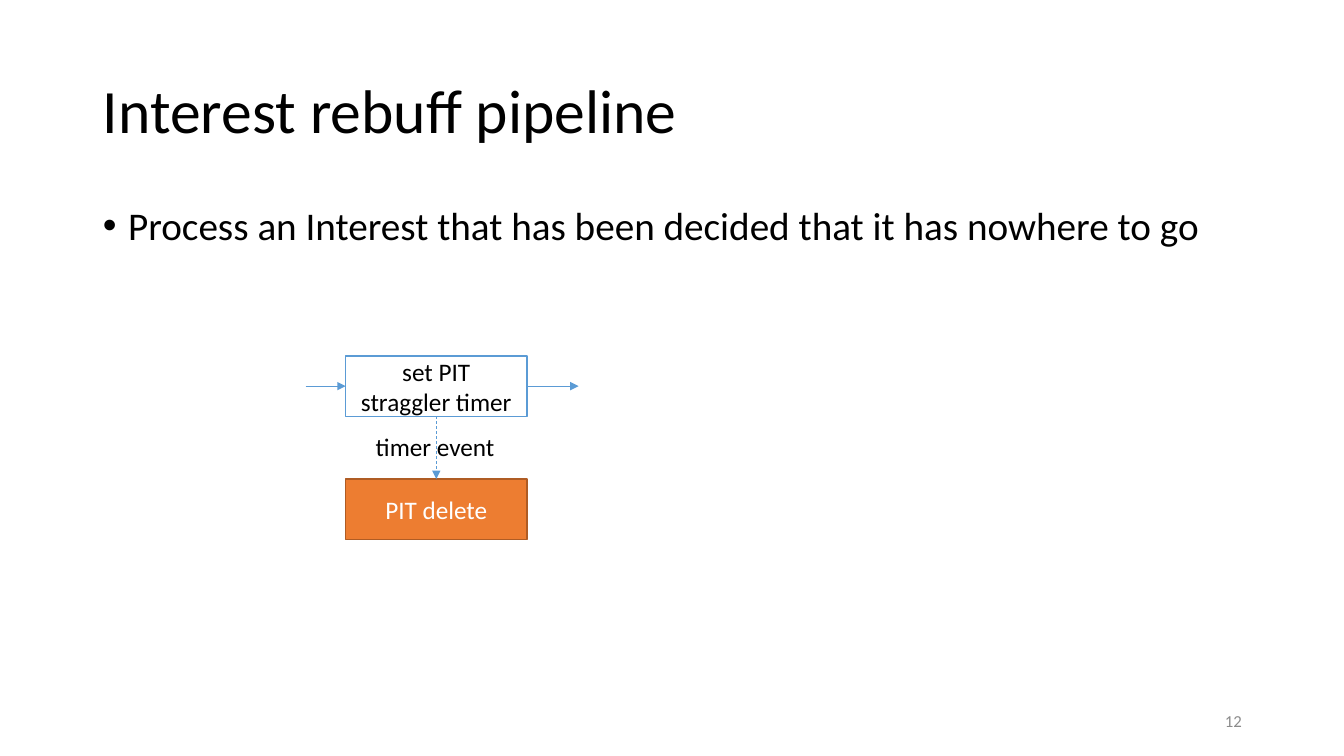
import pptx
import pptx.dml.color
import pptx.enum.dml
import pptx.enum.shapes
import pptx.enum.text
import pptx.oxml.ns
import pptx.util
from lxml import etree
from pptx.util import Cm

FONT = "Calibri"
BLACK, WHITE, GREY = "000000", "FFFFFF", "8C8C8C"
BLUE, ORANGE, BROWN = "5B9BD5", "ED7D31", "AF5C24"
ALIGN = pptx.enum.text.PP_ALIGN
ANCHOR = pptx.enum.text.MSO_ANCHOR
TOP, LEFT, BOTTOM, RIGHT = range(4)

# Pipeline grid, in cm
STEP_LEFT, STEP_WIDTH, STEP_HEIGHT = 8.71, 4.57, 1.52
TIMER_TOP, DELETE_TOP = 8.97, 12.07


def rgb(hex_colour):
    return pptx.dml.color.RGBColor.from_string(hex_colour)


def add_xml(parent, tag, **attributes):
    return etree.SubElement(parent, pptx.oxml.ns.qn(tag), attributes)


def write(shape, text, size, colour, align=ALIGN.LEFT, anchor=ANCHOR.MIDDLE, wrap=True):
    frame = shape.text_frame
    frame.text = text
    frame.word_wrap = wrap
    frame.auto_size = pptx.enum.text.MSO_AUTO_SIZE.NONE
    frame.vertical_anchor = anchor
    paragraph = frame.paragraphs[0]
    paragraph.alignment = align
    font = paragraph.runs[0].font
    font.name = FONT
    font.size = pptx.util.Pt(size)
    font.color.rgb = rgb(colour)
    return paragraph


def place(shape, left, top, width, height):
    shape.left, shape.top = Cm(left), Cm(top)
    shape.width, shape.height = Cm(width), Cm(height)


def add_label(slide, text, left, top, width, height, size, colour, **layout):
    label = slide.shapes.add_textbox(Cm(left), Cm(top), Cm(width), Cm(height))
    write(label, text, size, colour, **layout)


def add_step(slide, text, top, fill, outline, colour):
    step = slide.shapes.add_shape(
        pptx.enum.shapes.MSO_SHAPE.RECTANGLE,
        Cm(STEP_LEFT), Cm(top), Cm(STEP_WIDTH), Cm(STEP_HEIGHT))
    step.shadow.inherit = False
    step.fill.solid()
    step.fill.fore_color.rgb = rgb(fill)
    step.line.color.rgb = rgb(outline)
    step.line.width = pptx.util.Pt(1)
    write(step, text, 18, colour, align=ALIGN.CENTER)
    return step


def add_arrow(slide, start, end, source=None, target=None, dashed=False):
    """Draw an arrow; source and target are (step, side) pairs to join."""
    arrow = slide.shapes.add_connector(
        pptx.enum.shapes.MSO_CONNECTOR.STRAIGHT, *map(Cm, start + end))
    if source:
        arrow.begin_connect(*source)
    if target:
        arrow.end_connect(*target)
    arrow.line.color.rgb = rgb(BLUE)
    arrow.line.width = pptx.util.Pt(0.5)
    if dashed:
        arrow.line.dash_style = pptx.enum.dml.MSO_LINE.DASH
    properties = arrow.line._get_or_add_ln()
    add_xml(properties, "a:tailEnd", type="triangle")
    add_xml(properties.getparent(), "a:effectLst")


def fill_title(slide):
    title = slide.shapes.title
    place(title, 2.34, 1.02, 29.21, 3.68)
    write(title, "Interest rebuff pipeline", 44, BLACK).line_spacing = 0.9


def fill_body(slide):
    body = slide.placeholders[1]
    place(body, 2.34, 5.07, 29.21, 12.09)
    purpose = write(
        body, "Process an Interest that has been decided that it has nowhere to go",
        28, BLACK, anchor=ANCHOR.TOP)
    purpose.line_spacing = 0.9
    purpose.space_before = pptx.util.Pt(10)
    properties = purpose._p.get_or_add_pPr()
    indent = Cm(0.635)
    properties.set("marL", str(indent))
    properties.set("indent", str(-indent))
    add_xml(properties, "a:buFont", typeface="Arial")
    add_xml(properties, "a:buChar", char="•")


def draw_pipeline(slide):
    # Steps
    set_timer = add_step(slide, "set PIT straggler timer", TIMER_TOP, WHITE, BLUE, BLACK)
    pit_delete = add_step(slide, "PIT delete", DELETE_TOP, ORANGE, BROWN, WHITE)

    # Arrows in, out and down
    middle = TIMER_TOP + STEP_HEIGHT / 2
    centre = STEP_LEFT + STEP_WIDTH / 2
    step_right = STEP_LEFT + STEP_WIDTH
    add_arrow(slide, (7.7, middle), (STEP_LEFT, middle), target=(set_timer, LEFT))
    add_arrow(slide, (step_right, middle), (14.58, middle), source=(set_timer, RIGHT))
    add_arrow(slide, (centre, TIMER_TOP + STEP_HEIGHT), (centre, DELETE_TOP),
              source=(set_timer, BOTTOM), target=(pit_delete, TOP), dashed=True)

    # Event on the downward arrow
    add_label(slide, "timer event", 9.22, 10.74, 3.56, 1.02, 18, BLACK,
              anchor=ANCHOR.TOP, wrap=False)


def main():
    deck = pptx.Presentation()
    deck.slide_width, deck.slide_height = Cm(33.87), Cm(19.05)
    slide = deck.slides.add_slide(deck.slide_layouts[1])
    fill_title(slide)
    fill_body(slide)
    draw_pipeline(slide)
    # Slide number
    add_label(slide, "12", 23.93, 17.65, 7.62, 1.02, 12, GREY, align=ALIGN.RIGHT)
    deck.save("out.pptx")


if __name__ == "__main__":
    main()
